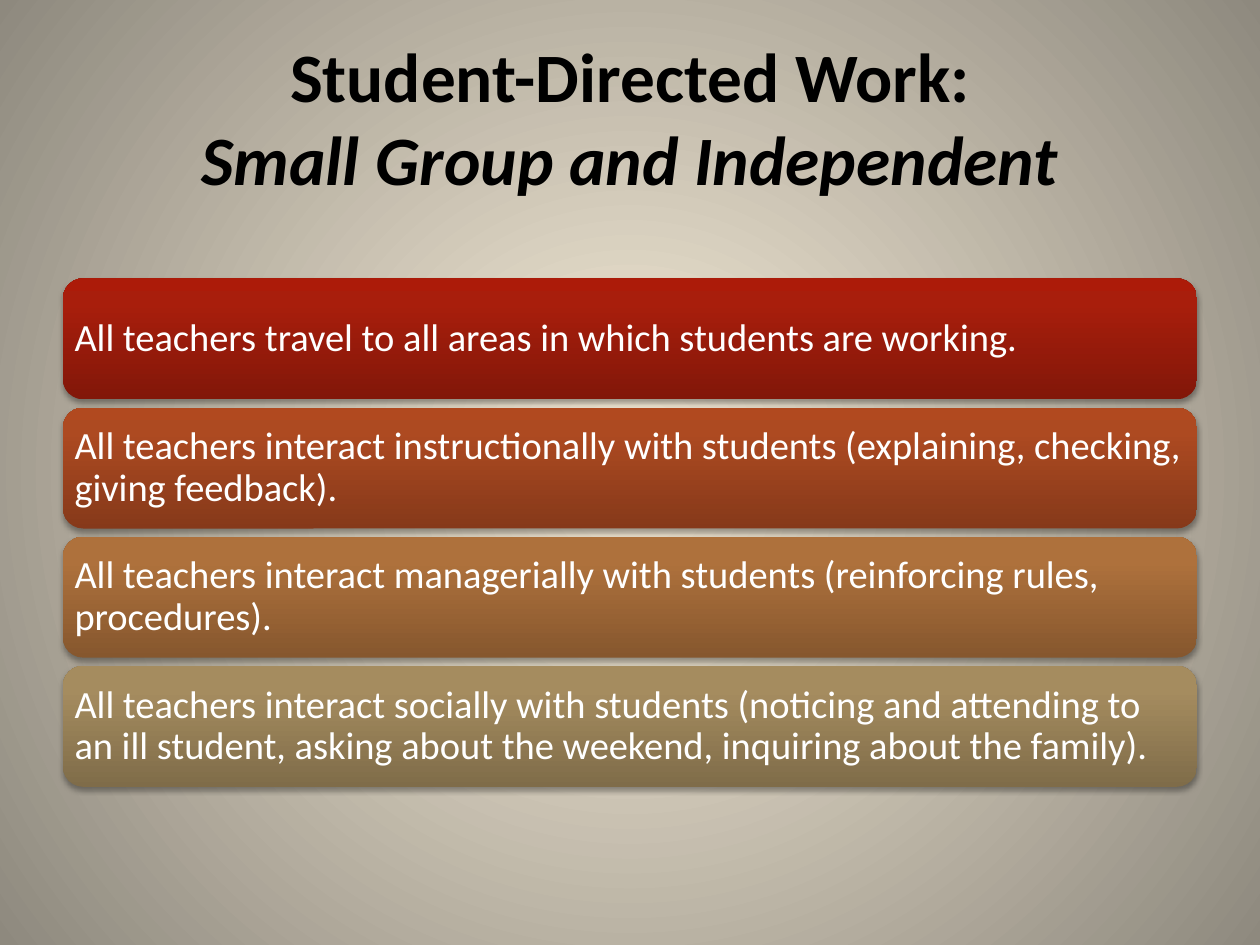
from lxml import etree
from pptx import Presentation
from pptx.dml.color import RGBColor
from pptx.enum.shapes import MSO_SHAPE
from pptx.enum.text import MSO_ANCHOR, PP_ALIGN
from pptx.oxml import parse_xml
from pptx.oxml.ns import nsdecls, qn
from pptx.util import Inches, Pt

ROUNDED = MSO_SHAPE.ROUNDED_RECTANGLE
MIDDLE = MSO_ANCHOR.MIDDLE
CENTER, LEFT = PP_ALIGN.CENTER, PP_ALIGN.LEFT

FONT = "Calibri"
COLORS = {"title": "000000", "practice": "FFFFFF", "shadow": "000000"}
BACKDROP = [(0, "F8EEDA"), (100, "8E897E")]
RADIAL = ('<a:path path="circle"><a:fillToRect l="50000" t="50000" '
          'r="50000" b="50000"/></a:path>')
UPWARD = '<a:lin ang="16200000" scaled="0"/>'

MARGIN, WIDTH = 0.5, 9
BAR_TOP, BAR_HEIGHT, BAR_STEP = 2.21, 0.96, 1.025
BAR_INSET = 0.045

# Text of each bar with its bottom, upper and top colour
PRACTICES = [
    ("All teachers travel to all areas in which students are working.",
     ("821709", "A81E0C", "AC1B09")),
    ("All teachers interact instructionally with students "
     "(explaining, checking, giving feedback).",
     ("86391A", "AD4A21", "B1491F")),
    ("All teachers interact managerially with students "
     "(reinforcing rules, procedures).",
     ("86572E", "AE713C", "B1713A")),
    ("All teachers interact socially with students (noticing and attending to "
     "an ill student, asking about the weekend, inquiring about the family).",
     ("7F6C49", "A58C5F", "A78D5E")),
]


def set_attributes(target, values):
    for name, value in values.items():
        setattr(target, name, value)


def set_gradient(properties, stops, direction):
    """Swap the solid fill in the properties element for a gradient."""
    stop_xml = "".join(
        f'<a:gs pos="{percent * 1000}"><a:srgbClr val="{color}"/></a:gs>'
        for percent, color in stops)
    gradient = parse_xml(
        f'<a:gradFill {nsdecls("a")} rotWithShape="1">'
        f'<a:gsLst>{stop_xml}</a:gsLst>{direction}</a:gradFill>')
    properties.replace(properties.find(qn("a:solidFill")), gradient)


def add_drop_shadow(shape):
    shape.shadow.inherit = False
    effects = shape.element.spPr.find(qn("a:effectLst"))
    shadow = etree.SubElement(
        effects, qn("a:outerShdw"), blurRad=str(Pt(3.1)), dist=str(Pt(1.8)),
        dir="5400000", rotWithShape="0")
    color = etree.SubElement(shadow, qn("a:srgbClr"), val=COLORS["shadow"])
    etree.SubElement(color, qn("a:alpha"), val="35000")


def format_run(run, size, color, **style):
    set_attributes(run.font, {"name": FONT, "size": Pt(size), **style})
    run.font.color.rgb = RGBColor.from_string(color)


def paint_background(slide):
    slide.background.fill.solid()
    properties = slide.element.find(".//" + qn("p:bgPr"))
    set_gradient(properties, BACKDROP, RADIAL)


def add_title(slide):
    title = slide.shapes.add_textbox(
        Inches(MARGIN), Inches(0.3), Inches(WIDTH), Inches(1.25))
    set_attributes(title.text_frame,
                   {"word_wrap": True, "vertical_anchor": MIDDLE})
    heading = title.text_frame.paragraphs[0]
    heading.alignment = CENTER
    for text, italic in (("Student-Directed Work:", False),
                         ("Small Group and Independent", True)):
        if heading.runs:
            heading.add_line_break()
        run = heading.add_run()
        run.text = text
        format_run(run, 39.6, COLORS["title"], bold=True, italic=italic)


def add_practice_bar(slide, top, text, shades):
    bar = slide.shapes.add_shape(
        ROUNDED, Inches(MARGIN), Inches(top), Inches(WIDTH), Inches(BAR_HEIGHT))
    bar.fill.solid()
    set_gradient(bar.element.spPr, zip((0, 80, 100), shades), UPWARD)
    bar.line.fill.background()
    add_drop_shadow(bar)

    inset = Inches(BAR_INSET)
    set_attributes(bar.text_frame, {
        "word_wrap": True, "vertical_anchor": MIDDLE,
        "margin_left": inset, "margin_right": inset,
        "margin_top": inset, "margin_bottom": inset})
    practice = bar.text_frame.paragraphs[0]
    set_attributes(practice, {"alignment": LEFT, "line_spacing": 0.9})
    run = practice.add_run()
    run.text = text
    format_run(run, 22, COLORS["practice"])


def main():
    presentation = Presentation()
    set_attributes(presentation,
                   {"slide_width": Inches(10), "slide_height": Inches(7.5)})
    slide = presentation.slides.add_slide(presentation.slide_layouts[6])

    paint_background(slide)
    add_title(slide)

    # Stacked bars at equal steps
    for index, (text, shades) in enumerate(PRACTICES):
        add_practice_bar(slide, BAR_TOP + index * BAR_STEP, text, shades)

    presentation.save("out.pptx")


if __name__ == "__main__":
    main()
